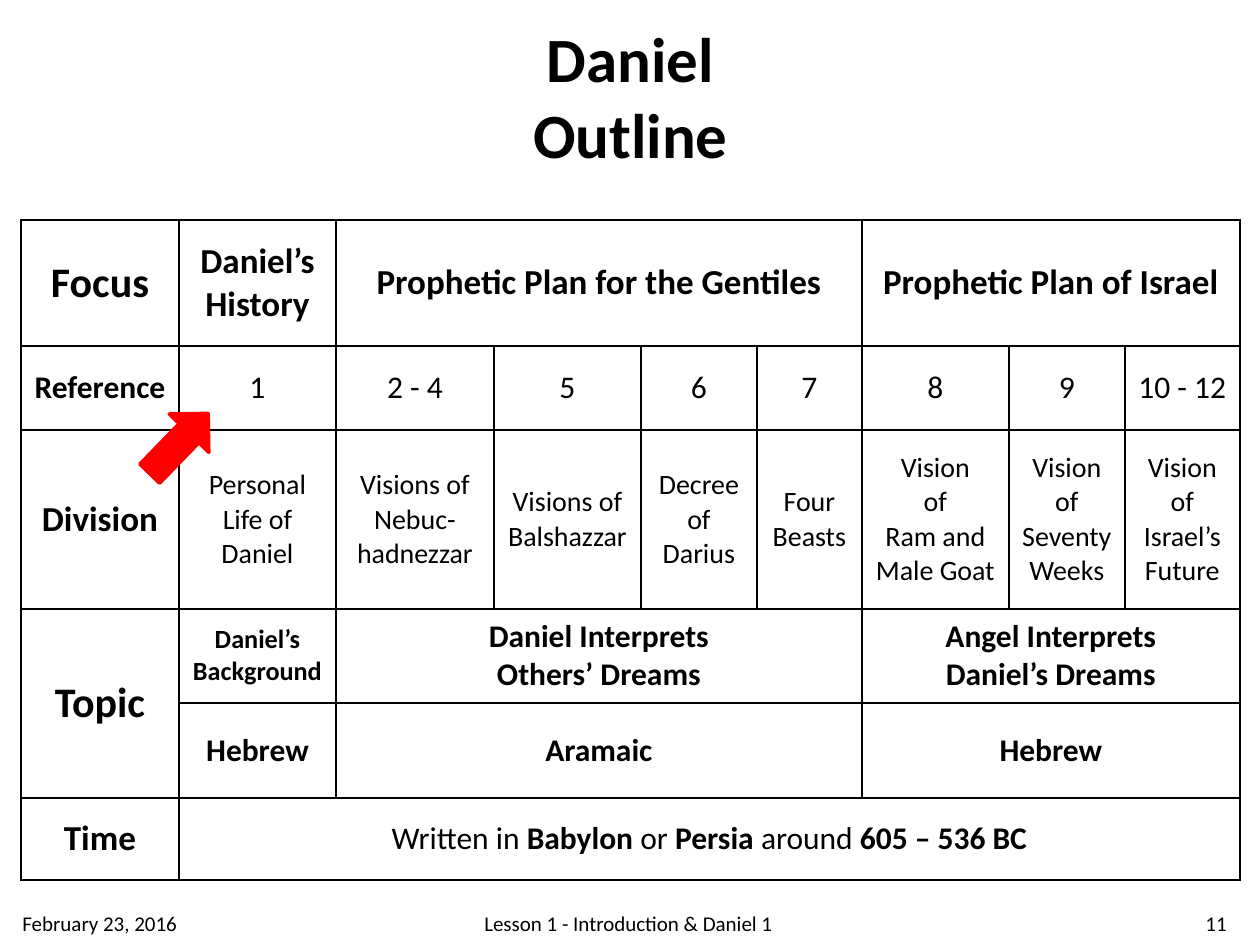
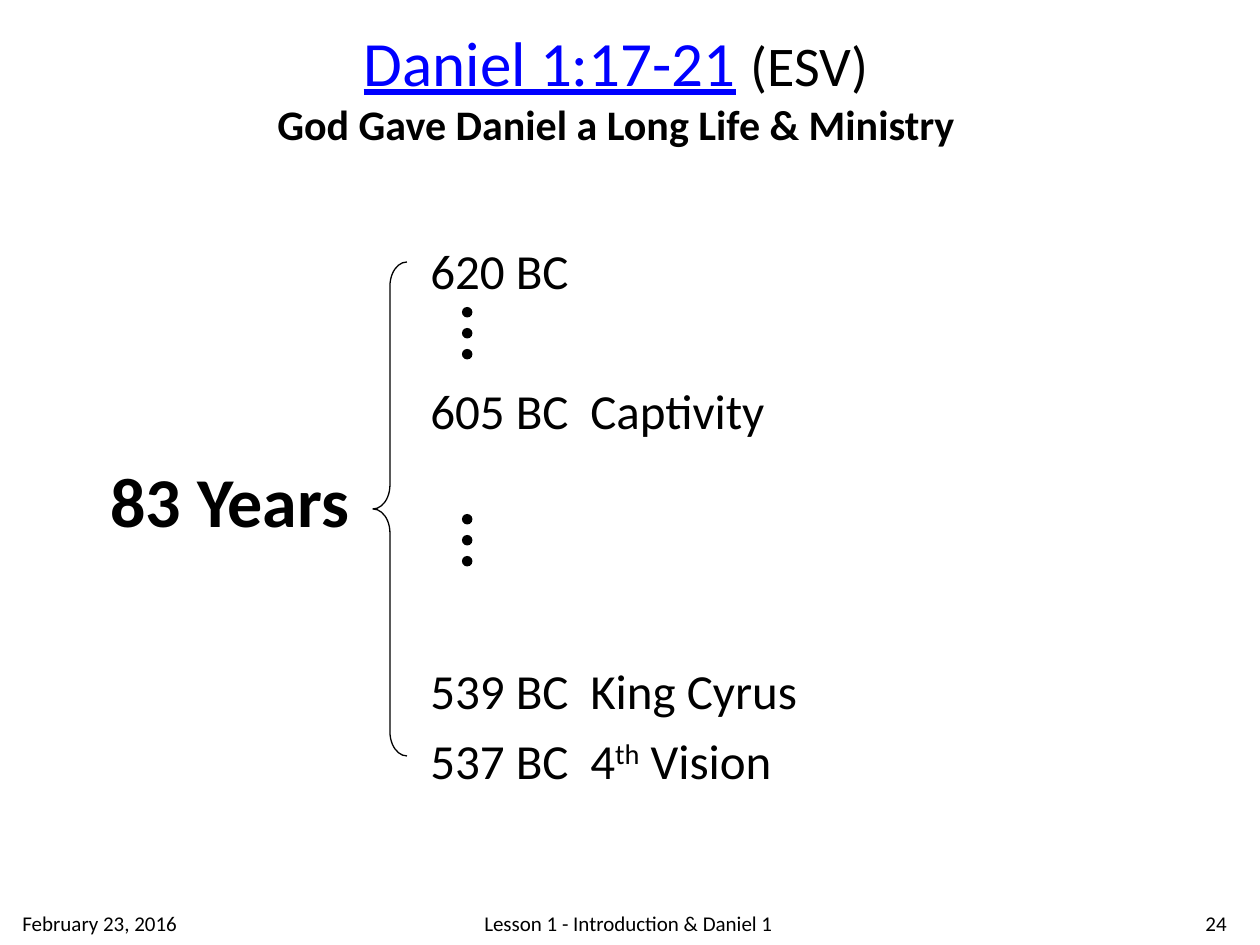
from pptx import Presentation
from pptx.dml.color import RGBColor
from pptx.enum.shapes import MSO_SHAPE
from pptx.enum.text import MSO_ANCHOR, PP_ALIGN
from pptx.oxml.ns import qn
from pptx.util import Emu, Pt
from lxml.etree import SubElement

PX_PER_INCH = 126
FONT = "Calibri"
BLACK, WHITE, RED, LINK_BLUE = "000000", "FFFFFF", "FF0000", "0000FF"
LEFT, CENTER, RIGHT = PP_ALIGN.LEFT, PP_ALIGN.CENTER, PP_ALIGN.RIGHT

DATE_TEXT = "February 23, 2016"
LESSON_TEXT = "Lesson 1 - Introduction & Daniel 1"

COLUMN_WIDTHS = [158, 157, 158, 147, 116, 105, 147, 116, 115]
ROW_HEIGHTS = [126, 84, 179, 94, 95, 82]
REFERENCES = ["1", "2 - 4", "5", "6", "7", "8", "9", "10 - 12"]
DIVISIONS = ["Personal Life of Daniel", "Visions of Nebuc-hadnezzar",
             "Visions of Balshazzar", "Decree of Darius", "Four Beasts",
             "Vision\nof\nRam and\nMale Goat", "Vision of Seventy Weeks",
             "Vision of Israel’s Future"]
# Row, column, text, size, bold
OUTLINE_CELLS = [
    (0, 0, "Focus", 24, True),
    (0, 1, "Daniel’s History", 20, True),
    (0, 2, "Prophetic Plan for the Gentiles", 20, True),
    (0, 6, "Prophetic Plan of Israel", 20, True),
    (1, 0, "Reference", 18, True),
    *[(1, column, text, 18, False) for column, text in enumerate(REFERENCES, 1)],
    (2, 0, "Division", 20, True),
    *[(2, column, text, 16, False) for column, text in enumerate(DIVISIONS, 1)],
    (3, 0, "Topic", 24, True),
    (3, 1, "Daniel’s Background", 15, True),
    (3, 2, "Daniel Interprets\nOthers’ Dreams", 18, True),
    (3, 6, "Angel Interprets\nDaniel’s Dreams", 18, True),
    (4, 1, "Hebrew", 18, True),
    (4, 2, "Aramaic", 18, True),
    (4, 6, "Hebrew", 18, True),
    (5, 0, "Time", 20, True),
]
TIME_RUNS = [("Written in ", False), ("Babylon ", True), ("or ", False),
             ("Persia ", True), ("around ", False), ("605 – 536 BC", True)]
# First row, first column, last row, last column
MERGES = [(3, 0, 4, 0), (5, 1, 5, 8)] + [
    (row, first, row, last) for row in (0, 3, 4) for first, last in ((2, 5), (6, 8))]


def px(length):
    return Emu(round(length * 914400 / PX_PER_INCH))


def box_px(box):
    return [px(length) for length in box]


def color(hex_string):
    return RGBColor.from_string(hex_string)


def set_font(font, size, bold=False, hex_string=BLACK):
    font.name = FONT
    font.size = Pt(size)
    font.bold = bold
    font.color.rgb = color(hex_string)


def write_lines(text_frame, text, size, bold=False, align=CENTER):
    text_frame.text = text
    for paragraph in text_frame.paragraphs:
        paragraph.alignment = align
        set_font(paragraph.font, size, bold)


def add_text(slide, box, text, size, bold=False, align=LEFT,
             anchor=MSO_ANCHOR.TOP, wrap=True):
    text_frame = slide.shapes.add_textbox(*box_px(box)).text_frame
    text_frame.word_wrap = wrap
    text_frame.vertical_anchor = anchor
    write_lines(text_frame, text, size, bold, align)
    return text_frame


def add_plain_shape(shapes, kind, box, fill=None, line=None, line_width=1):
    shape = shapes.add_shape(kind, *box_px(box))
    shape.shadow.inherit = False
    if fill:
        shape.fill.solid()
        shape.fill.fore_color.rgb = color(fill)
    else:
        shape.fill.background()
    if line:
        shape.line.color.rgb = color(line)
        shape.line.width = Pt(line_width)
    else:
        shape.line.fill.background()
    return shape


def place_title(slide, box):
    title = slide.shapes.title
    title.left, title.top, title.width, title.height = box_px(box)
    title.text_frame.vertical_anchor = MSO_ANCHOR.MIDDLE
    title.text_frame.word_wrap = True
    return title.text_frame


def add_footer(slide, number):
    top, height = 898, 50
    for left, width, text, align in ((10, 199, DATE_TEXT, LEFT),
                                     (287, 683, LESSON_TEXT, CENTER),
                                     (1144, 95, number, RIGHT)):
        add_text(slide, (left, top, width, height), text, 12, align=align,
                 anchor=MSO_ANCHOR.MIDDLE)


def format_cell(cell):
    properties = cell._tc.get_or_add_tcPr()
    for side in ("a:lnL", "a:lnR", "a:lnT", "a:lnB"):
        border = SubElement(properties, qn(side), w=str(Pt(1)))
        fill = SubElement(border, qn("a:solidFill"))
        SubElement(fill, qn("a:srgbClr"), val=BLACK)
    cell.fill.solid()
    cell.fill.fore_color.rgb = color(WHITE)
    cell.vertical_anchor = MSO_ANCHOR.MIDDLE


def add_outline_table(slide, left, top):
    box = (left, top, sum(COLUMN_WIDTHS), sum(ROW_HEIGHTS))
    table = slide.shapes.add_table(len(ROW_HEIGHTS), len(COLUMN_WIDTHS),
                                   *box_px(box)).table
    table.first_row = table.horz_banding = False
    for column, width in zip(table.columns, COLUMN_WIDTHS):
        column.width = px(width)
    for row, height in zip(table.rows, ROW_HEIGHTS):
        row.height = px(height)
    for cell in table.iter_cells():
        format_cell(cell)
    for first_row, first_column, last_row, last_column in MERGES:
        table.cell(first_row, first_column).merge(table.cell(last_row, last_column))
    for row, column, text, size, bold in OUTLINE_CELLS:
        write_lines(table.cell(row, column).text_frame, text, size, bold)

    # The time row mixes regular and bold words
    paragraph = table.cell(5, 1).text_frame.paragraphs[0]
    paragraph.alignment = CENTER
    for text, bold in TIME_RUNS:
        run = paragraph.add_run()
        run.text = text
        set_font(run.font, 18, bold)


def add_date_list(slide, box):
    text_frame = add_text(slide, box, "620 BC", 28)
    line_height = 40
    # Date, event, empty lines above
    for date, event, gap_lines in (("605 BC", "Captivity", 1),
                                   ("539 BC", "King Cyrus", 3),
                                   ("537 BC", "4", 0)):
        paragraph = text_frame.add_paragraph()
        paragraph.space_before = Pt(gap_lines * line_height)
        tabs = SubElement(paragraph._p.get_or_add_pPr(), qn("a:tabLst"))
        SubElement(tabs, qn("a:tab"), pos=str(px(160)), algn="l")
        set_font(paragraph.font, 28)
        paragraph.add_run().text = f"{date}\t{event}"
    ordinal = paragraph.add_run()
    ordinal.text = "th"
    ordinal._r.get_or_add_rPr().set("baseline", "30000")
    paragraph.add_run().text = " Vision"
    for paragraph in text_frame.paragraphs:
        paragraph.line_spacing = Pt(line_height)


def add_dots(slide, left, top):
    size, pitch = 10.5, 21
    group = slide.shapes.add_group_shape()
    for index in range(3):
        add_plain_shape(group.shapes, MSO_SHAPE.OVAL,
                        (left, top + index * pitch, size, size), fill=BLACK)


def build_outline_slide(presentation):
    slide = presentation.slides.add_slide(presentation.slide_layouts[5])
    write_lines(place_title(slide, (519, 13, 223, 165)), "Daniel\nOutline", 36, True)
    add_outline_table(slide, 21, 220)
    add_footer(slide, "11")

    # Arrow to the first chapter
    arrow = add_plain_shape(slide.shapes, MSO_SHAPE.RIGHT_ARROW,
                            (137, 416, 84, 55), RED, RED, 2)
    arrow.rotation = 314.1


def build_lifespan_slide(presentation):
    slide = presentation.slides.add_slide(presentation.slide_layouts[5])

    # Passage and theme
    title = place_title(slide, (222, 16, 788, 140))
    write_lines(title, "\nGod Gave Daniel a Long Life & Ministry", 24, True)
    for text, size, hex_string in (("Daniel 1:17-21", 36, LINK_BLUE),
                                   (" ", 36, BLACK), ("(ESV)", 32, BLACK)):
        run = title.paragraphs[0].add_run()
        run.text = text
        set_font(run.font, size, hex_string=hex_string)
        run.font.underline = hex_string == LINK_BLUE

    # Dates, with dots for the years between
    add_date_list(slide, (418, 223, 428, 649))
    for top in (307, 514):
        add_dots(slide, 462, top)

    # Span of years
    brace = add_plain_shape(slide.shapes, MSO_SHAPE.LEFT_BRACE,
                            (373, 262, 34, 494), line=BLACK, line_width=0.75)
    brace.adjustments[0], brace.adjustments[1] = 0.71, 0.5
    add_text(slide, (95, 451, 267, 97), "83 Years", 40, True, RIGHT, wrap=False)
    add_footer(slide, "24")


def main():
    presentation = Presentation()
    presentation.slide_width, presentation.slide_height = px(1260), px(945)
    build_outline_slide(presentation)
    build_lifespan_slide(presentation)
    presentation.save("out.pptx")


if __name__ == "__main__":
    main()
